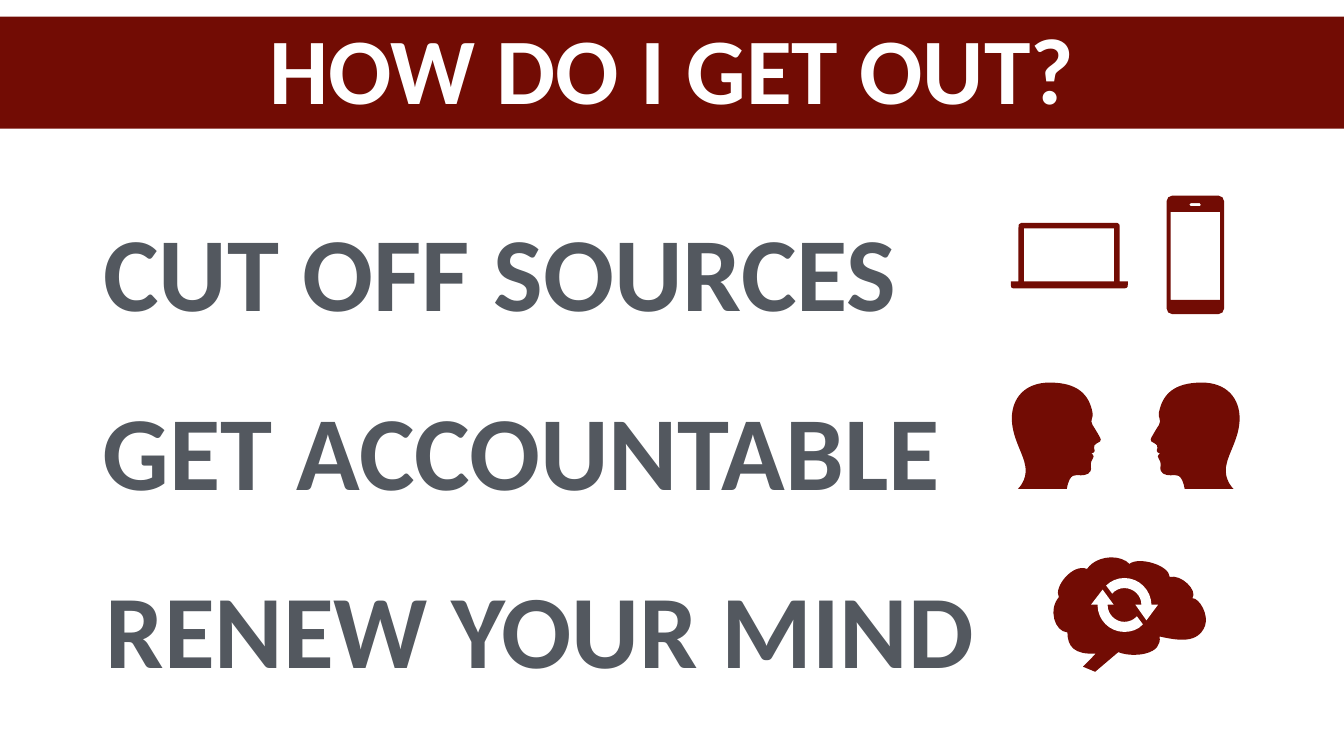
from dataclasses import dataclass

from pptx import Presentation
from pptx.dml.color import RGBColor as Rgb
from pptx.enum.shapes import MSO_SHAPE as Preset
from pptx.enum.text import PP_ALIGN as Align
from pptx.oxml.ns import qn
from pptx.util import Cm, Pt
from lxml.etree import SubElement as Sub

HUES = {"red": "720C04", "gray": "53585F", "white": "FFFFFF"}
UNIT = 0.0254
MOVES = {"M": ("a:moveTo", 1), "L": ("a:lnTo", 1),
         "C": ("a:cubicBezTo", 3), "Z": ("a:close", 0)}


@dataclass
class Label:
    text: str
    left: float
    top: float
    width: float
    height: float
    size: float
    hue: str = "gray"
    align: Align = Align.LEFT
    pitch: float | None = 1.1


@dataclass
class Icon:
    left: float
    top: float
    wide: int
    high: int
    route: str
    hue: str = "red"
    flip: bool = False


@dataclass
class Bar:
    left: float
    top: float
    width: float
    height: float
    hue: str = "red"


BRAIN = """M 116 0 C 97 0 77 8 67 23 C 38 11 0 60 11 79 C -10 103 2 147 28 149
C 28 178 43 193 84 191 C 75 201 59 217 59 217 L 83 227 L 129 188
C 129 188 151 198 182 191 C 205 185 213 174 211 157 C 247 165 287 172 301 136
C 309 114 290 81 276 81 C 287 65 253 33 231 39 C 230 15 169 -2 151 13
C 144 5 130 0 116 0 Z"""

LAPTOP = """M 21 0 C 15 0 15 5 15 10 L 15 116 L 0 116 C 0 116 0 120 0 123
C 0 130 2 130 9 130 L 111 130 L 121 130 L 222 130
C 229 130 232 130 232 123 C 232 120 232 116 232 116
L 216 116 L 216 10 C 216 5 216 0 211 0 L 21 0 Z
M 26 11 L 205 11 L 205 116 L 121 116 L 111 116 L 26 116 L 26 11 Z"""

PHONE = """M 11 0 C 5 0 0 5 0 11 L 0 224 C 0 230 5 235 11 235 L 103 235
C 109 235 114 230 114 224 L 114 11 C 114 5 109 0 103 0 L 11 0 Z
M 48 15 L 66 15 C 67 15 68 16 68 18 C 68 19 67 21 66 21 L 48 21
C 47 21 45 19 45 18 C 45 16 47 15 48 15 Z
M 8 32 L 106 32 L 106 207 L 8 207 L 8 32 Z"""

HEAD = """M 75 0 C 25 0 0 32 0 71 C 0 110 23 140 27 167 C 31 194 12 211 12 211
L 109 211 C 115 178 126 184 137 184 C 147 184 159 181 157 167
C 156 158 158 155 161 150 C 165 145 158 141 158 141 L 162 139
C 164 138 165 135 164 133 C 164 133 164 132 163 130 C 163 126 164 122 168 121
C 171 120 173 118 175 117 C 177 115 177 111 175 109 C 170 100 164 90 160 84
C 154 74 163 69 160 59 C 153 24 131 0 75 0 Z"""

CYCLE = """M 66 0 C 52 0 39 6 30 15 L 42 31 C 48 24 57 20 66 20
C 85 20 100 35 100 53 L 88 53 L 110 84 L 133 53 L 120 53 C 119 24 96 0 66 0 Z
M 23 23 L 0 53 L 13 53 C 13 53 13 54 13 54 C 13 83 37 107 66 107
C 81 107 94 102 103 92 L 91 76 C 85 83 76 87 66 87 C 48 87 33 72 33 54
C 33 54 33 53 33 53 L 45 53 L 23 23 Z"""

PARTS = [
    Label("CUT OFF SOURCES", 5, 9.58, 44.83, 8.76, 150),
    Icon(53.09, 28.09, 303, 227, BRAIN),
    Icon(50.95, 11.23, 232, 130, LAPTOP),
    Icon(58.8, 9.86, 114, 235, PHONE),
    Label("GET ACCOUNTABLE", 4.99, 18.6, 44.58, 8.76, 150),
    Icon(51, 19.28, 176, 211, HEAD),
    Icon(58.01, 19.28, 176, 211, HEAD, flip=True),
    Label("RENEW YOUR MIND", 5.13, 27.64, 44.58, 8.1, 148.5),
    Icon(54.99, 29.13, 133, 107, CYCLE, "white"),
    Bar(-0.94, 0.84, 69.34, 5.64),
    Label("HOW DO I GET OUT?", 1.79, 0.36, 64.16, 6.27, 134,
          "white", Align.CENTER, None),
]


def tone(name: str) -> Rgb:
    return Rgb.from_string(HUES[name])


def paint(shape, hue: str) -> None:
    shape.shadow.inherit = False
    shape.fill.solid()
    shape.fill.fore_color.rgb = tone(hue)
    shape.line.fill.background()


def trace(track, icon: Icon) -> None:
    for child in list(track):
        track.remove(child)
    words = iter(icon.route.split())
    for word in words:
        tag, count = MOVES[word]
        move = Sub(track, qn(tag))
        for _ in range(count):
            x, y = int(next(words)), next(words)
            if icon.flip:
                x = icon.wide - x
            Sub(move, qn("a:pt"), x=str(x), y=y)


def draw_icon(slide, icon: Icon) -> None:
    form = slide.shapes.build_freeform(0, 0, scale=Cm(UNIT))
    form.add_line_segments(
        [(icon.wide, 0), (icon.wide, icon.high), (0, icon.high)])
    shape = form.convert_to_shape(Cm(icon.left), Cm(icon.top))
    trace(next(shape.element.iter(qn("a:path"))), icon)
    paint(shape, icon.hue)


def draw_bar(slide, bar: Bar) -> None:
    shape = slide.shapes.add_shape(
        Preset.RECTANGLE, Cm(bar.left), Cm(bar.top),
        Cm(bar.width), Cm(bar.height))
    paint(shape, bar.hue)


def draw_label(slide, label: Label) -> None:
    box = slide.shapes.add_textbox(
        Cm(label.left), Cm(label.top), Cm(label.width), Cm(label.height))
    frame = box.text_frame
    frame.word_wrap = True
    frame.margin_left = frame.margin_right = Cm(0.2)
    frame.margin_top = frame.margin_bottom = Cm(0.2)
    para = frame.paragraphs[0]
    para.text = label.text
    para.alignment = label.align
    para.line_spacing = label.pitch
    font = para.font
    font.name = "Calibri"
    font.size = Pt(label.size)
    font.bold = True
    font.color.rgb = tone(label.hue)


DRAW = {Label: draw_label, Icon: draw_icon, Bar: draw_bar}


def main() -> None:
    deck = Presentation()
    deck.slide_width, deck.slide_height = Cm(67.74), Cm(38.1)
    slide = deck.slides.add_slide(deck.slide_layouts[6])
    for part in PARTS:
        DRAW[type(part)](slide, part)
    deck.save("out.pptx")


if __name__ == "__main__":
    main()
